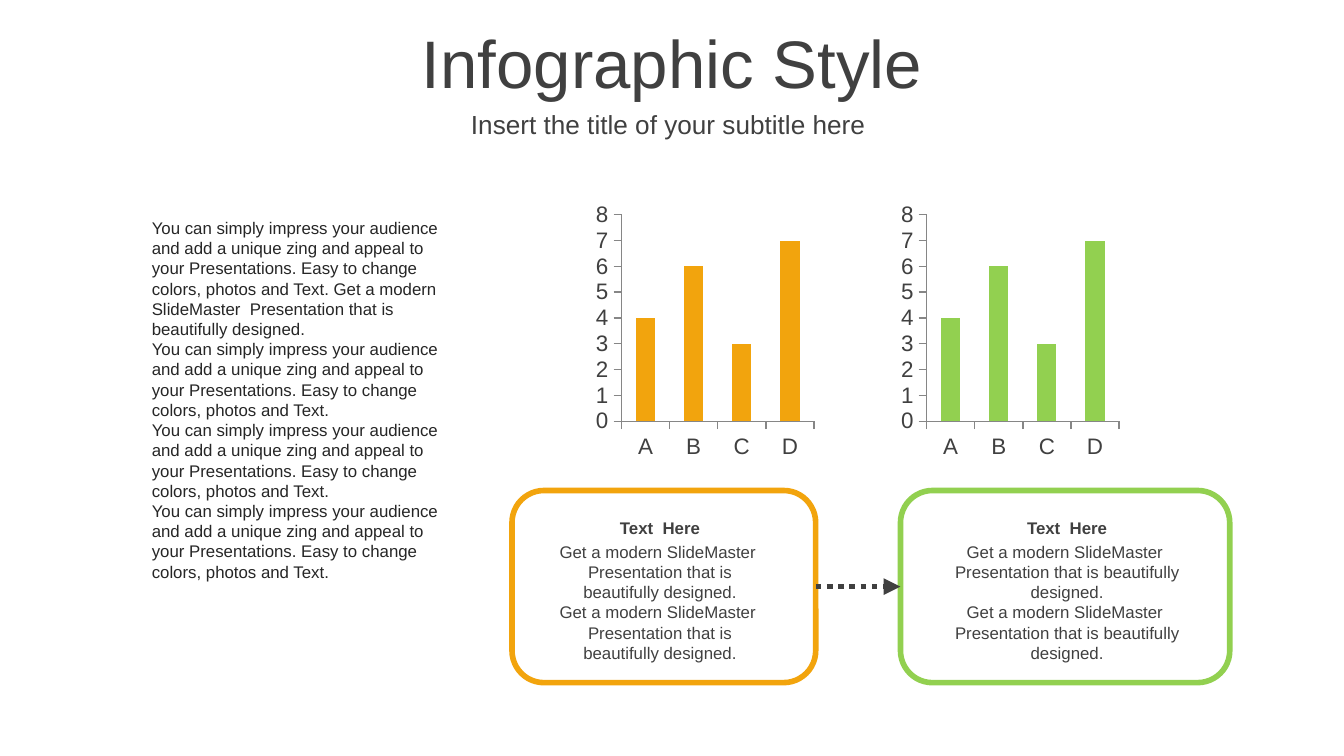
from lxml.etree import SubElement
from pptx import Presentation
from pptx.chart.data import CategoryChartData
from pptx.dml.color import RGBColor
from pptx.enum.chart import XL_CHART_TYPE, XL_TICK_MARK
from pptx.enum.dml import MSO_LINE
from pptx.enum.shapes import MSO_CONNECTOR, MSO_SHAPE
from pptx.enum.text import MSO_ANCHOR, MSO_AUTO_SIZE, PP_ALIGN
from pptx.oxml.ns import qn
from pptx.util import Inches, Pt

FONT, DARK, INK, GRAY = "Arial", "404040", "262626", "868686"
TITLE = "Infographic Style"
SUB = "Insert the title of your subtitle here "
MODERN = "Get a modern SlideMaster  Presentation that is beautifully designed."
EASY = ("You can simply impress your audience and add a unique zing and appeal "
        "to your Presentations. Easy to change colors, photos and Text.")
STORY = [f"{EASY} {MODERN}", EASY, EASY, EASY]
HEAD, BODY = "Text  Here", [MODERN, MODERN]
CATS, VALS = ["A", "B", "C", "D"], [4, 6, 3, 7]
PANELS = [
    {"color": "F2A40D", "chart": 4.4, "box": (3.81, 2.26), "text": (4.02, 1.78)},
    {"color": "92D050", "chart": 6.67, "box": (6.7, 2.45), "text": (6.96, 1.96)},
]


def rgb(code):
    return RGBColor.from_string(code)


def style(font, size, color, bold=False):
    font.name, font.size, font.bold = FONT, Pt(size), bold
    font.color.rgb = rgb(color)


def write(shape, lines, size, color=DARK, bold=False,
          align=PP_ALIGN.CENTER, anchor=MSO_ANCHOR.TOP):
    frame = shape.text_frame
    frame.word_wrap = True
    frame.auto_size = MSO_AUTO_SIZE.NONE
    frame.vertical_anchor = anchor
    for i, line in enumerate(lines):
        para = frame.add_paragraph() if i else frame.paragraphs[0]
        para.alignment = align
        run = para.add_run()
        run.text = line
        style(run.font, size, color, bold)


def add_text(slide, area, lines, size, **look):
    shape = slide.shapes.add_textbox(*map(Inches, area))
    write(shape, lines, size, **look)
    return shape


def add_bars(slide, left, color):
    data = CategoryChartData()
    data.categories = CATS
    data.add_series("Series 1", VALS)
    area = map(Inches, (left, 1.47, 1.69, 1.98))
    chart = slide.shapes.add_chart(XL_CHART_TYPE.COLUMN_STACKED, *area, data).chart
    chart.has_legend = chart.has_title = False
    style(chart.font, 18, "000000")
    for axis in (chart.category_axis, chart.value_axis):
        axis.has_major_gridlines = False
        axis.major_tick_mark = XL_TICK_MARK.OUTSIDE
        axis.minor_tick_mark = XL_TICK_MARK.NONE
        axis.format.line.color.rgb = rgb(GRAY)
        style(axis.tick_labels.font, 12, DARK)
    axis = chart.value_axis
    axis.minimum_scale, axis.maximum_scale, axis.major_unit = 0, 8, 1
    plot = chart.plots[0]
    plot.gap_width, plot.overlap, plot.vary_by_categories = 150, 100, False
    fill = plot.series[0].format.fill
    fill.solid()
    fill.fore_color.rgb = rgb(color)


def add_box(slide, left, width, color):
    area = map(Inches, (left, 3.65, width, 1.43))
    box = slide.shapes.add_shape(MSO_SHAPE.ROUNDED_RECTANGLE, *area)
    box.shadow.inherit = False
    box.fill.solid()
    box.fill.fore_color.rgb = rgb("FFFFFF")
    box.line.color.rgb = rgb(color)
    box.line.width = Pt(3)
    return box


def add_arrow(slide, start, end):
    arrow = slide.shapes.add_connector(MSO_CONNECTOR.STRAIGHT, 0, 0, 0, 0)
    arrow.begin_connect(start, 3)
    arrow.end_connect(end, 1)
    arrow.line.color.rgb = rgb(DARK)
    arrow.line.width = Pt(3)
    arrow.line.dash_style = MSO_LINE.ROUND_DOT
    props = arrow.line._get_or_add_ln()
    props.find(qn("a:prstDash")).set("val", "sysDot")
    SubElement(props, qn("a:tailEnd"), type="triangle")
    SubElement(props.getparent(), qn("a:effectLst"))


def main():
    deck = Presentation()
    deck.slide_width, deck.slide_height = Inches(10), Inches(10 * 9 / 16)
    slide = deck.slides.add_slide(deck.slide_layouts[5])

    title = slide.shapes.title
    title.left, title.top, title.width, title.height = map(Inches, (0, 0.14, 10, 0.63))
    write(title, [TITLE], 36, anchor=MSO_ANCHOR.MIDDLE)
    add_text(slide, (0, 0.77, 10, 0.31), [SUB], 14, anchor=MSO_ANCHOR.MIDDLE)

    boxes = []
    for panel in PANELS:
        color = panel["color"]
        left, width = panel["text"]
        add_bars(slide, panel["chart"], color)
        boxes.append(add_box(slide, *panel["box"], color))
        add_text(slide, (left, 3.98, width, 1.01), BODY, 9)
        add_text(slide, (left, 3.8, width, 0.25), [HEAD], 9, bold=True)
    add_arrow(slide, *boxes)

    story = add_text(slide, (1.06, 1.58, 2.44, 2.8), STORY, 9,
                     color=INK, align=PP_ALIGN.LEFT)
    frame = story.text_frame
    frame.margin_left = frame.margin_right = Inches(0.07)
    frame.margin_top = frame.margin_bottom = Inches(0.04)
    deck.save("out.pptx")


if __name__ == "__main__":
    main()
